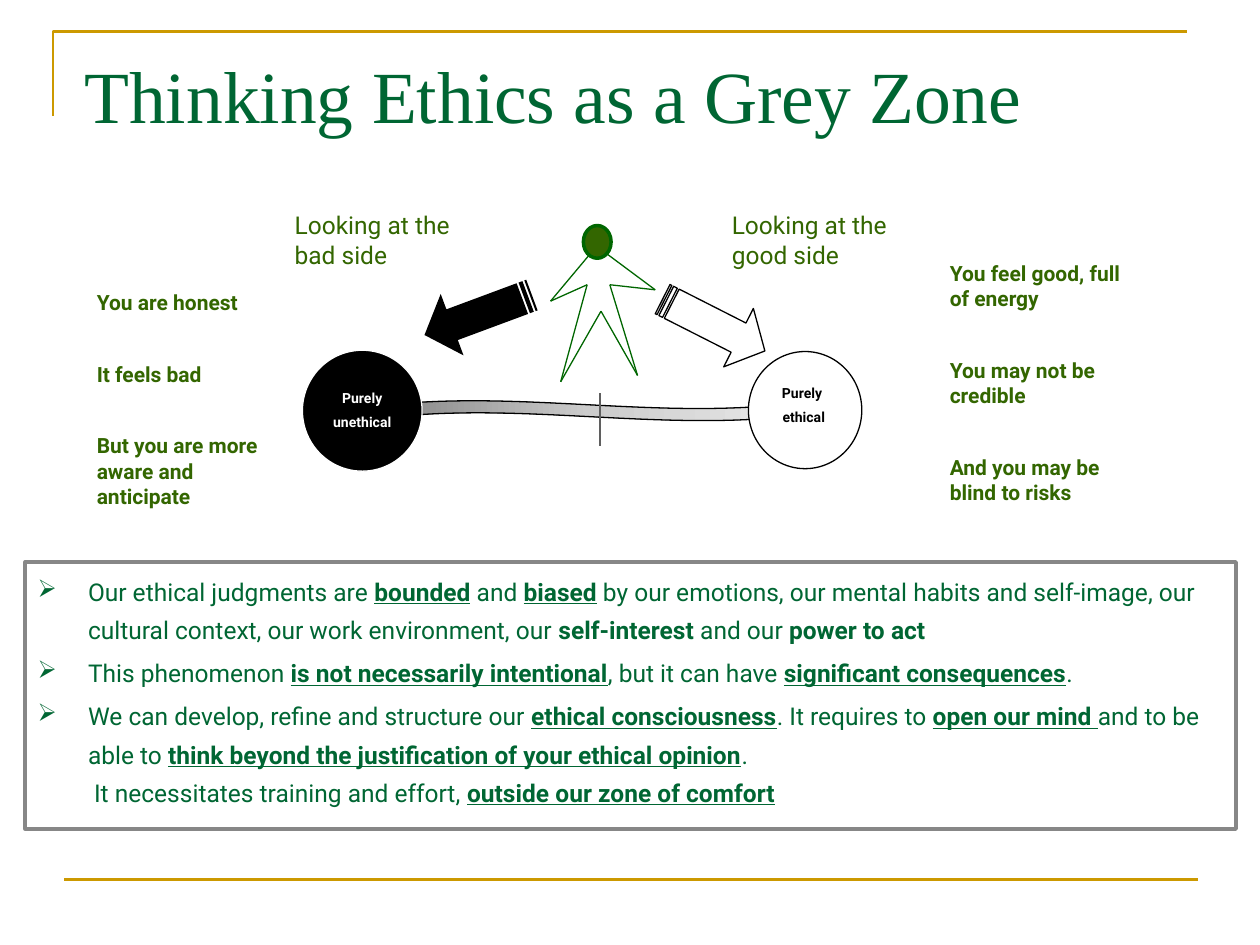
from copy import deepcopy
from itertools import pairwise

from lxml import etree
from pptx import Presentation
from pptx.dml.color import RGBColor
from pptx.enum.shapes import MSO_CONNECTOR, MSO_SHAPE
from pptx.enum.text import MSO_ANCHOR, PP_ALIGN
from pptx.oxml.ns import qn
from pptx.util import Inches, Pt

RECT, OVAL = MSO_SHAPE.RECTANGLE, MSO_SHAPE.OVAL
WAVE, ARROW = MSO_SHAPE.WAVE, MSO_SHAPE.STRIPED_RIGHT_ARROW
STRAIGHT = MSO_CONNECTOR.STRAIGHT
TOP, MIDDLE = MSO_ANCHOR.TOP, MSO_ANCHOR.MIDDLE
LEFT, CENTER = PP_ALIGN.LEFT, PP_ALIGN.CENTER

COLORS = {name: RGBColor.from_string(value) for name, value in {
    "gold": "CC9900", "title": "006633", "olive": "336600", "green": "006600",
    "black": "000000", "white": "FFFFFF", "frame": "878787", "tick": "5F5F5F",
    "silver": "CCCCCC", "pale": "E6E6E6",
}.items()}

prs = Presentation()
prs.slide_width, prs.slide_height = Inches(10), Inches(7.5)
slide = prs.slides.add_slide(prs.slide_layouts[6])


def add_shape(shapes, kind, box, fill, line=None, width=0.75):
    sp = shapes.add_shape(kind, *map(Inches, box))
    sp.shadow.inherit = False
    sp.fill.solid()
    sp.fill.fore_color.rgb = COLORS[fill]
    if line:
        sp.line.color.rgb = COLORS[line]
        sp.line.width = Pt(width)
    else:
        sp.line.fill.background()
    return sp


def add_line(shapes, start, end, color, width):
    cx = shapes.add_connector(STRAIGHT, *map(Inches, start + end))
    cx.line.color.rgb = COLORS[color]
    cx.line.width = Pt(width)
    etree.SubElement(cx._element.spPr, qn("a:effectLst"))


fb = slide.shapes.build_freeform(Inches(0.42), Inches(0.92))
fb.add_line_segments([(Inches(0.42), Inches(0.25)), (Inches(9.42), Inches(0.25))], close=False)
sp = fb.convert_to_shape()
sp.shadow.inherit = False
sp.fill.background()
sp.line.color.rgb = COLORS["gold"]
sp.line.width = Pt(1.5)
add_line(slide.shapes, (0.51, 6.98), (9.51, 6.98), "gold", 1.5)

sp = slide.shapes.add_textbox(*map(Inches, (0.67, 0.33, 8.83, 0.83)))
tf = sp.text_frame
tf.word_wrap = True
tf.vertical_anchor = MIDDLE
tf.margin_left = tf.margin_top = tf.margin_right = tf.margin_bottom = 0
tf.text = "Thinking Ethics as a Grey Zone"
font = tf.paragraphs[0].runs[0].font
font.name, font.size, font.color.rgb = "Times New Roman", Pt(42), COLORS["title"]

notes = [
    ((7.44, 2.02, 1.73, 2.12), 12, True,
     ["You feel good, full of energy", "You may not be credible", "And you may be blind to risks"]),
    ((0.67, 2.25, 1.5, 1.92), 12, True,
     ["You are honest", "It feels bad", "But you are more aware and anticipate"]),
    ((5.71, 1.62, 1.74, 0.57), 14, False, ["Looking at the good side"]),
    ((2.24, 1.62, 1.73, 0.57), 14, False, ["Looking at the bad side"]),
]
for box, size, bold, lines in notes:
    tf = slide.shapes.add_textbox(*map(Inches, box)).text_frame
    tf.word_wrap = True
    tf.text = "\n".join(lines)
    for i, p in enumerate(tf.paragraphs):
        p.space_before = Pt(26.5 if i else 0)
        font = p.runs[0].font
        font.name, font.size, font.bold = "Roboto", Pt(size), bold
        font.color.rgb = COLORS["olive"]

judgments = [
    [("Our ethical judgments are ", ""), ("bounded", "bu"), (" and ", ""), ("biased", "bu"),
     (" by our emotions, our mental habits and self-image, our cultural context, "
      "our work environment, our ", ""),
     ("self-interest", "b"), (" and our ", ""), ("power to act", "b")],
    [("This phenomenon ", ""), ("is not necessarily intentional", "bu"),
     (", but it can have ", ""), ("significant consequences", "bu"), (".", "")],
    [("We can develop, refine and structure our ", ""), ("ethical consciousness", "bu"),
     (". It requires to ", ""), ("open our mind ", "bu"), ("and to be able to ", ""),
     ("think beyond the justification of your ethical opinion", "bu"), (".", ""), ("\n", ""),
     (" It necessitates training and effort, ", ""), ("outside", "bu"), (" ", "u"),
     ("our zone of comfort", "bu")],
]
sp = add_shape(slide.shapes, RECT, (0.2, 4.46, 9.61, 2.12), "white", "frame", 2)
tf = sp.text_frame
tf.word_wrap = True
tf.vertical_anchor = TOP
for i, parts in enumerate(judgments):
    p = tf.add_paragraph() if i else tf.paragraphs[0]
    p.alignment = LEFT
    p.line_spacing = 1.3
    p.space_before = Pt(2.8 if i else 0)
    pPr = p._p.get_or_add_pPr()
    pPr.set("marL", str(Inches(0.4)))
    pPr.set("indent", str(Inches(-0.4)))
    etree.SubElement(pPr, qn("a:buChar"), char="➢")
    for text, style in parts:
        if text == "\n":
            p.add_line_break()
            continue
        r = p.add_run()
        r.text = text
        r.font.name, r.font.size = "Roboto", Pt(14)
        r.font.color.rgb = COLORS["title"]
        r.font.bold = "b" in style
        r.font.underline = "u" in style

sp = add_shape(slide.shapes, WAVE, (3.1, 3.18, 3.14, 0.16), "silver", "black")
sp.adjustments[0], sp.adjustments[1] = 0.2, 0.006
sp.fill.gradient()
sp.fill.gradient_angle = 0
first = sp._element.spPr.find(".//" + qn("a:gs"))
first.addnext(deepcopy(first))
for stop, position, color in zip(sp.fill.gradient_stops, (0, 0.5, 1), ("frame", "silver", "pale")):
    stop.position = position
    stop.color.rgb = COLORS[color]

add_line(slide.shapes, (4.76, 3.12), (4.76, 3.54), "tick", 1)

for left, top, angle, fill in [(3.34, 2.24, 159.6, "black"), (5.21, 2.32, 26.9, "white")]:
    sp = add_shape(slide.shapes, ARROW, (left, top, 0.91, 0.52), fill, "black")
    sp.rotation = angle
    sp.adjustments[0], sp.adjustments[1] = 0.5, 0.45
    if fill == "black":
        sp.line.fill.background()

poles = [
    ((5.94, 2.79, 0.9, 0.93), (6.03, 3, 0.7, 0.44), "white", "black", "Purely \nethical"),
    ((2.4, 2.78, 0.95, 0.96), (2.48, 3.04, 0.79, 0.44), "black", "white", "Purely\nunethical"),
]
for circle, label, fill, ink, text in poles:
    group = slide.shapes.add_group_shape()
    add_shape(group.shapes, OVAL, circle, fill, ink)
    tf = add_shape(group.shapes, RECT, label, fill).text_frame
    tf.word_wrap = True
    tf.vertical_anchor = TOP
    tf.text = text
    for i, p in enumerate(tf.paragraphs):
        p.alignment = CENTER
        p.space_before = Pt(4.3 if i else 0)
        font = p.runs[0].font
        font.name, font.size, font.bold = "Roboto", Pt(8), True
        font.color.rgb = COLORS[ink]

body = [(4.73, 1.96), (4.37, 2.39), (4.66, 2.26), (4.45, 3.03), (4.77, 2.47),
        (5.06, 2.98), (4.84, 2.26), (5.2, 2.3), (4.81, 2.01)]
person = slide.shapes.add_group_shape()
for start, end in pairwise(body):
    add_line(person.shapes, start, end, "green", 0.75)
add_shape(person.shapes, OVAL, (4.63, 1.79, 0.22, 0.26), "olive", "green", 2)

prs.save("out.pptx")
